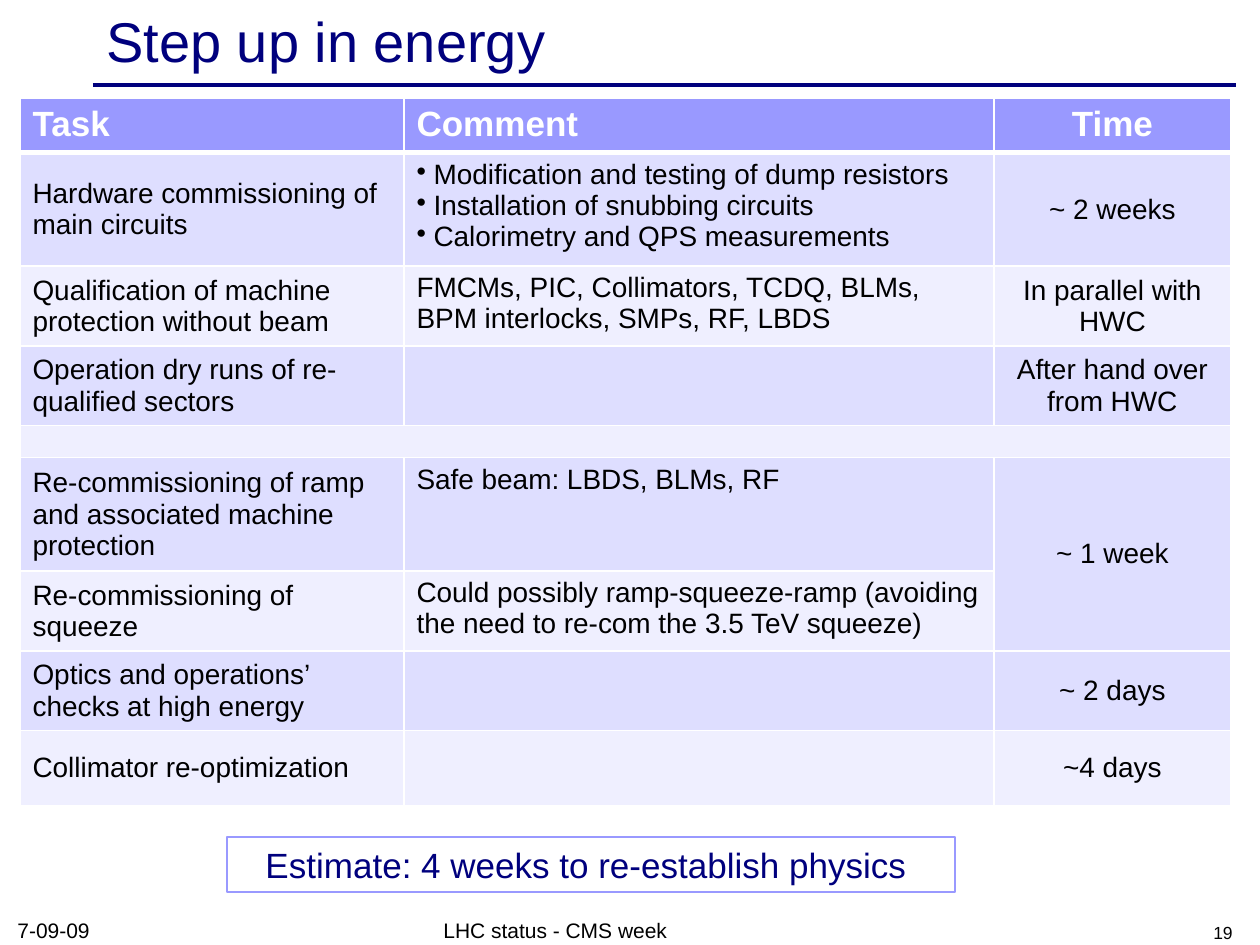
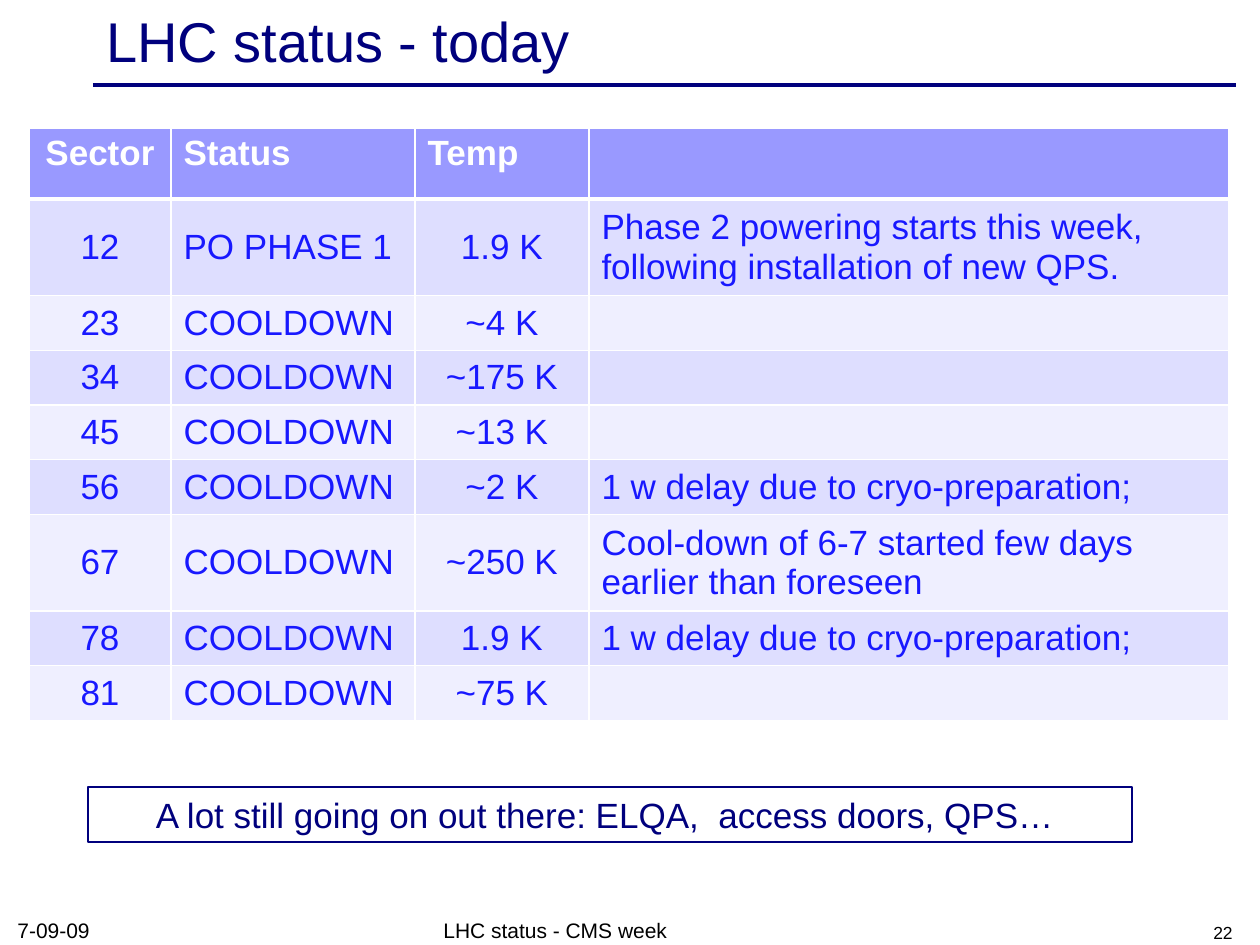
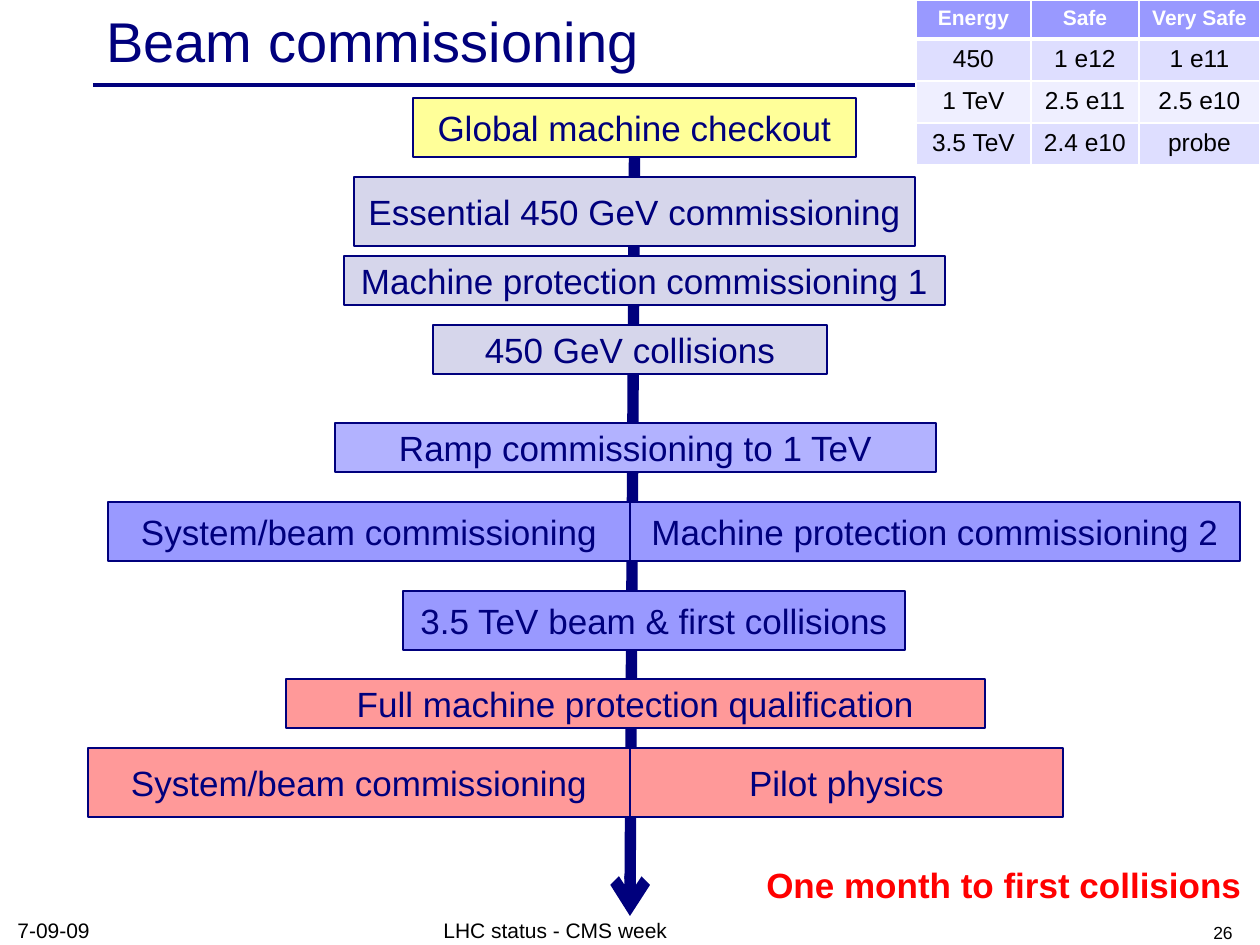
import pptx
import pptx.dml.color
import pptx.enum.shapes
import pptx.enum.text
import pptx.oxml.ns
import pptx.util
from lxml import etree

PX = 7257  # EMU per pixel, at 126 pixels to the inch
FONT = "Arial"
NAVY, PERIWINKLE, LAVENDER, PALE = "00007D", "9999FF", "DEDEFF", "EFEFFF"
GREY, LILAC, YELLOW, PINK = "D6D6EB", "B2B2FF", "FFFF99", "FF9999"
WHITE, BLACK, BLUE, RED = "FFFFFF", "000000", "1818FF", "FF0000"

rgb = pptx.dml.color.RGBColor.from_string
qn = pptx.oxml.ns.qn
ALIGN = {"l": pptx.enum.text.PP_ALIGN.LEFT,
         "c": pptx.enum.text.PP_ALIGN.CENTER,
         "r": pptx.enum.text.PP_ALIGN.RIGHT}
ANCHOR = {"t": pptx.enum.text.MSO_ANCHOR.TOP,
          "m": pptx.enum.text.MSO_ANCHOR.MIDDLE,
          "b": pptx.enum.text.MSO_ANCHOR.BOTTOM}


def write(frame, text, size, colour, align="l", bold=False):
    """Fill a text frame; several lines become a bulleted list."""
    frame.text = text
    for paragraph in frame.paragraphs:
        paragraph.alignment = ALIGN[align]
        if len(frame.paragraphs) > 1:
            properties = paragraph._p.get_or_add_pPr()
            properties.set("marL", str(17 * PX))
            properties.set("indent", str(-17 * PX))
            etree.SubElement(properties, qn("a:buChar"), char="•")
        for run in paragraph.runs:
            run.font.name = FONT
            run.font.size = pptx.util.Pt(size)
            run.font.bold = bold
            run.font.color.rgb = rgb(colour)


def add_box(slide, place, text, size, colour, align="l", anchor="m",
            bold=False, fill=None, line=None, line_width=1):
    """Add a text box, or a rectangle when a line colour is given."""
    place = [length * PX for length in place]
    if line:
        box = slide.shapes.add_shape(pptx.enum.shapes.MSO_SHAPE.RECTANGLE, *place)
        box.shadow.inherit = False
        box.line.color.rgb = rgb(line)
        box.line.width = pptx.util.Pt(line_width)
        if fill:
            box.fill.solid()
            box.fill.fore_color.rgb = rgb(fill)
        else:
            box.fill.background()
    else:
        box = slide.shapes.add_textbox(*place)
    box.text_frame.word_wrap = True
    box.text_frame.vertical_anchor = ANCHOR[anchor]
    write(box.text_frame, text, size, colour, align, bold)
    return box


# Content of the tables
energy_steps = [
    ["Task", "Comment", "Time"],
    ["Hardware commissioning of main circuits",
     "Modification and testing of dump resistors\n"
     "Installation of snubbing circuits\n"
     "Calorimetry and QPS measurements", "~ 2 weeks"],
    ["Qualification of machine protection without beam",
     "FMCMs, PIC, Collimators, TCDQ, BLMs, BPM interlocks, SMPs, RF, LBDS",
     "In parallel with HWC"],
    ["Operation dry runs of re-qualified sectors", "", "After hand over from HWC"],
    ["", "", ""],
    ["Re-commissioning of ramp and associated machine protection",
     "Safe beam: LBDS, BLMs, RF", "~ 1 week"],
    ["Re-commissioning of squeeze",
     "Could possibly ramp-squeeze-ramp (avoiding the need to re-com "
     "the 3.5 TeV squeeze)", ""],
    ["Optics and operations’ checks at high energy", "", "~ 2 days"],
    ["Collimator re-optimization", "", "~4 days"],
]
cryo_delay = "1 w delay due to cryo-preparation;"
sector_status = [
    ["Sector", "Status", "Temp", ""],
    ["12", "PO PHASE 1", "1.9 K",
     "Phase 2 powering starts this week, following installation of new QPS."],
    ["23", "COOLDOWN", "~4 K", ""],
    ["34", "COOLDOWN", "~175 K", ""],
    ["45", "COOLDOWN", "~13 K", ""],
    ["56", "COOLDOWN", "~2 K", cryo_delay],
    ["67", "COOLDOWN", "~250 K",
     "Cool-down of 6-7 started few days earlier than foreseen"],
    ["78", "COOLDOWN", "1.9 K", cryo_delay],
    ["81", "COOLDOWN", "~75 K", ""],
]
safe_intensity = [
    ["Energy", "Safe", "Very Safe"],
    ["450", "1 e12", "1 e11"],
    ["1 TeV", "2.5 e11", "2.5 e10"],
    ["3.5 TeV", "2.4 e10", "probe"],
]

# Title, page number and table layout of each slide
pages = [
    dict(title="Step up in energy", number=19, rows=energy_steps,
         left=20, top=98, widths=[384, 590, 237],
         heights=[51, 105, 76, 76, 32, 106, 76, 76, 75],
         head_align="llc", align="llc", anchors="mtm",
         head_size=20, size=16, colour=BLACK,
         merges=[(4, 0, 4, 2), (5, 2, 6, 2)]),
    dict(title="LHC status - today", number=22, rows=sector_status,
         left=29, top=128, widths=[142, 244, 174, 640],
         heights=[71, 91, 51, 52, 52, 51, 91, 51, 52],
         head_align="clll", align="clcl", anchors="mmmm",
         head_size=20, size=20, colour=BLUE, merges=[]),
    dict(title="Beam commissioning", number=26, rows=safe_intensity,
         left=916, top=0, widths=[115, 108, 121], heights=[39, 42, 42, 42],
         head_align="ccc", align="ccc", anchors="ttt",
         head_size=12, size=14, colour=BLACK, merges=[]),
]

deck = pptx.Presentation()
deck.slide_width = pptx.util.Inches(10)
deck.slide_height = pptx.util.Inches(7.5)
straight = pptx.enum.shapes.MSO_CONNECTOR.STRAIGHT

for page in pages:
    slide = deck.slides.add_slide(deck.slide_layouts[6])

    # Title, rule and footer
    rule = slide.shapes.add_connector(straight, 93 * PX, 85 * PX, 1236 * PX, 85 * PX)
    rule.line.color.rgb = rgb(NAVY)
    rule.line.width = pptx.util.Pt(2)
    etree.SubElement(rule._element.spPr, qn("a:effectLst"))
    add_box(slide, (94, 4, 1134, 72), page["title"], 32, NAVY)
    add_box(slide, (5, 912, 294, 37), "7-09-09", 12, BLACK, anchor="b")
    add_box(slide, (431, 913, 399, 36), "LHC status - CMS week", 12, BLACK, anchor="b")
    add_box(slide, (951, 913, 294, 36), str(page["number"]), 10, BLACK, "r", "b")

    # Table
    rows, widths, heights = page["rows"], page["widths"], page["heights"]
    table = slide.shapes.add_table(
        len(rows), len(widths), page["left"] * PX, page["top"] * PX,
        sum(widths) * PX, sum(heights) * PX).table
    for column, width in zip(table.columns, widths):
        column.width = width * PX
    for r, (row, height) in enumerate(zip(rows, heights)):
        table.rows[r].height = height * PX
        is_head = r == 0
        for c, text in enumerate(row):
            cell = table.cell(r, c)
            properties = cell._tc.get_or_add_tcPr()
            for side in ("lnL", "lnR", "lnT", "lnB"):
                heavy = (r, side) in ((0, "lnB"), (1, "lnT"))
                border = etree.SubElement(properties, qn("a:" + side),
                                          w=str(pptx.util.Pt(3 if heavy else 1)))
                paint = etree.SubElement(border, qn("a:solidFill"))
                etree.SubElement(paint, qn("a:srgbClr"), val=WHITE)
            cell.fill.solid()
            cell.fill.fore_color.rgb = rgb(
                PERIWINKLE if is_head else LAVENDER if r % 2 else PALE)
            cell.vertical_anchor = ANCHOR["t" if is_head else page["anchors"][c]]
            if text:
                write(cell.text_frame, text,
                      page["head_size"] if is_head else page["size"],
                      WHITE if is_head else page["colour"],
                      page["head_align" if is_head else "align"][c], is_head)
            else:
                # Small empty cells let the thin separator row keep its height
                end = cell.text_frame.paragraphs[0]._p.get_or_add_endParaRPr()
                end.set("sz", "800")
    for top, left, bottom, right in page["merges"]:
        table.cell(top, left).merge(table.cell(bottom, right))

energy_slide, status_slide, beam_slide = deck.slides

# Conclusions below the tables
add_box(energy_slide, (227, 837, 728, 55), "Estimate: 4 weeks to re-establish physics ",
        20, NAVY, "c", line=PERIWINKLE, line_width=0.75)
add_box(status_slide, (88, 787, 1044, 55),
        "A lot still going on out there: ELQA,  access doors, QPS… ",
        20, NAVY, "c", line=NAVY, line_width=0.75)
add_box(beam_slide, (748, 857, 512, 55), "One month to first collisions",
        20, RED, "c", bold=True)

# Commissioning sequence: the arrow lies behind the stages
sequence = beam_slide.shapes.add_connector(straight, 635 * PX, 157 * PX, 630 * PX, 916 * PX)
sequence.line.color.rgb = rgb(NAVY)
sequence.line.width = pptx.util.Pt(6.5)
etree.SubElement(sequence.line._get_or_add_ln(), qn("a:tailEnd"), type="arrow")
etree.SubElement(sequence._element.spPr, qn("a:effectLst"))

stages = [
    (413, 98, 443, 59, YELLOW, "Global machine checkout"),
    (354, 177, 561, 69, GREY, "Essential 450 GeV commissioning"),
    (344, 256, 601, 49, GREY, "Machine protection commissioning 1"),
    (433, 325, 394, 49, GREY, "450 GeV collisions"),
    (335, 423, 601, 49, LILAC, "Ramp commissioning to 1 TeV"),
    (108, 502, 522, 59, PERIWINKLE, "System/beam commissioning"),
    (630, 502, 610, 59, PERIWINKLE, "Machine protection commissioning 2"),
    (403, 591, 502, 59, PERIWINKLE, "3.5 TeV beam & first collisions"),
    (286, 679, 699, 49, PINK, "Full machine protection qualification"),
    (88, 748, 542, 69, PINK, "System/beam commissioning"),
    (630, 748, 433, 69, PINK, "Pilot physics"),
]
stage_boxes = [add_box(beam_slide, place, text, 20, NAVY, "c", fill=fill, line=NAVY)
               for *place, fill, text in stages]
sequence.begin_connect(stage_boxes[0], 2)

deck.save("out.pptx")
